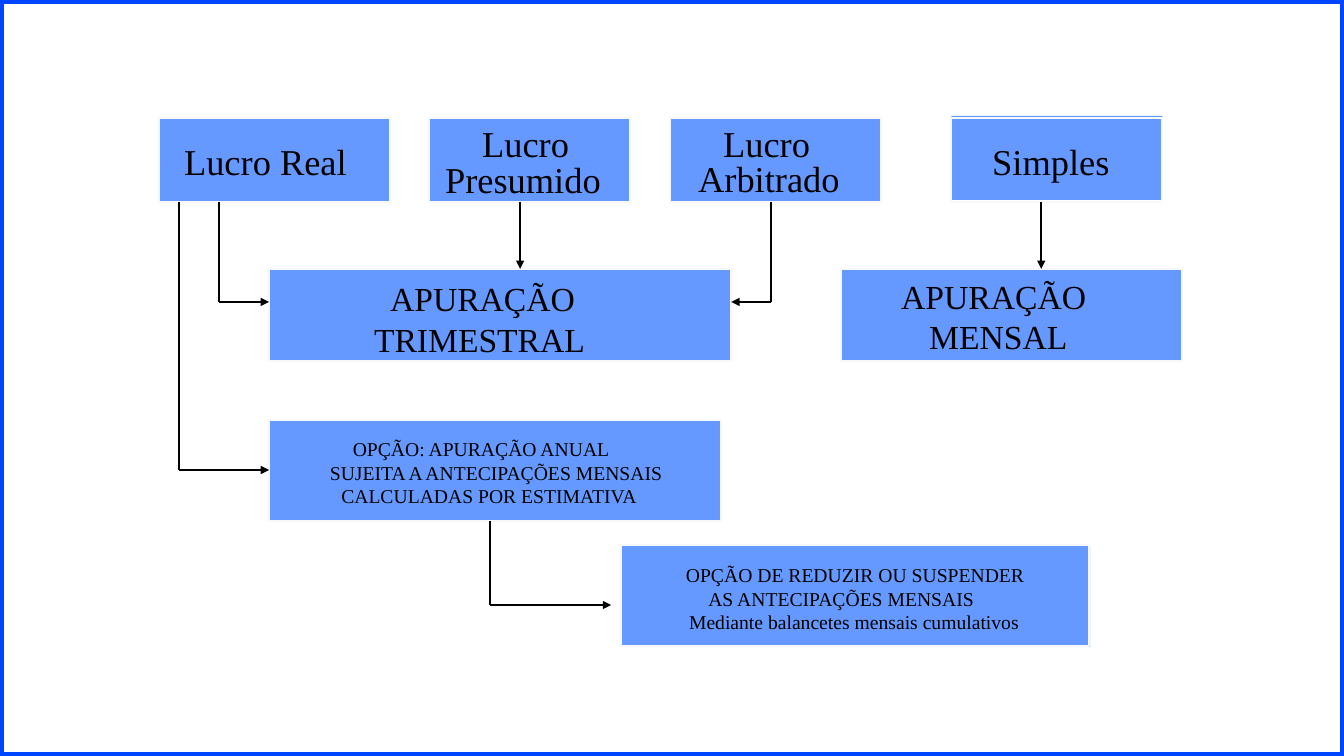
"""Build the flow chart of profit regimes and their assessment periods."""
from lxml import etree
from pptx import Presentation, util as u
from pptx.dml.color import RGBColor
from pptx.enum import shapes, text
from pptx.oxml.ns import qn

PX = u.Inches(1) / 100.8
BORDER_BLUE = RGBColor(0x00, 0x45, 0xFF)
BOX_BLUE = RGBColor(0x66, 0x99, 0xFF)
FRAME_GREY = RGBColor(0xF8, 0xF8, 0xF8)
BLACK = RGBColor(0, 0, 0)

# box (left, top, width, height), frame offset (x, y)
BOXES = [
    ((159, 118, 231, 84), (0, 0)),
    ((429, 118, 201, 84), (0, 0)),
    ((670, 118, 211, 84), (0, 0)),
    ((951, 116, 211, 84), (0, 2)),
    ((269, 269, 462, 92), (0, 0)),
    ((841, 269, 341, 92), (0, 0)),
    ((269, 420, 452, 101), (0, 0)),
    ((622, 546, 468, 101), (-1, -1)),
]
LEFT, CENTER = text.PP_ALIGN.LEFT, text.PP_ALIGN.CENTER
LABEL_GROUPS = [
    ({"size": 26, "align": LEFT, "width": 240, "height": 41}, [
        ("Lucro Real", 184, 136),
        ("Lucro", 482, 118),
        ("Presumido", 445, 154),
        ("Lucro", 723, 118),
        ("Arbitrado", 698, 153),
        ("Simples", 992, 136),
    ]),
    ({"size": 24, "align": LEFT, "width": 300, "height": 41}, [
        ("APURAÇÃO", 390, 275),
        ("TRIMESTRAL", 374, 316),
        ("APURAÇÃO", 901, 273),
        ("MENSAL", 929, 313),
    ]),
    ({"size": 14, "align": CENTER, "width": 500, "height": 24}, [
        ("OPÇÃO: APURAÇÃO ANUAL", 481, 435),
        ("SUJEITA A ANTECIPAÇÕES MENSAIS", 496, 459),
        ("CALCULADAS POR ESTIMATIVA", 489, 482),
        ("OPÇÃO DE REDUZIR OU SUSPENDER", 855, 561),
        ("AS ANTECIPAÇÕES MENSAIS", 841, 585),
        ("Mediante balancetes mensais cumulativos", 854, 608),
    ]),
]
ROUTES = [
    [(520, 202), (520, 269)],
    [(1041, 202), (1041, 269)],
    [(219, 202), (219, 302), (269, 302)],
    [(771, 202), (771, 302), (731, 302)],
    [(179, 202), (179, 470), (269, 470)],
    [(490, 521), (490, 605), (611, 605)],
]


def emu(*lengths):
    return [round(length * PX) for length in lengths]


def set_all(target, values):
    for name, value in values.items():
        setattr(target, name, value)


def add_box(slide, bounds, fill=None, line=None, weight=1.5):
    shape = slide.shapes.add_shape(shapes.MSO_SHAPE.RECTANGLE, *emu(*bounds))
    shape.shadow.inherit = False
    if fill is None:
        shape.fill.background()
    else:
        shape.fill.solid()
        shape.fill.fore_color.rgb = fill
    if line is None:
        shape.line.fill.background()
    else:
        shape.line.color.rgb = line
        shape.line.width = u.Pt(weight)


def add_label(slide, words, x, top, size, align, width, height):
    left = x - width / 2 if align == CENTER else x
    frame = slide.shapes.add_textbox(*emu(left, top, width, height)).text_frame
    set_all(frame, {"word_wrap": True, "margin_left": 0, "margin_right": 0,
                    "margin_top": 0, "margin_bottom": 0})
    paragraph = frame.paragraphs[0]
    set_all(paragraph, {"alignment": align, "line_spacing": 1.07,
                        "space_after": u.Pt(8)})
    run = paragraph.add_run()
    run.text = words
    set_all(run.font, {"name": "Times New Roman", "size": u.Pt(size)})
    run.font.color.rgb = BLACK


def add_route(slide, points):
    for start, end in zip(points, points[1:]):
        connector = slide.shapes.add_connector(
            shapes.MSO_CONNECTOR.STRAIGHT, *emu(*start, *end))
        connector.line.color.rgb = BLACK
        connector.line.width = u.Pt(1.25)
        if end == points[-1]:
            etree.SubElement(connector.line._get_or_add_ln(),
                             qn("a:tailEnd"), type="triangle")
        etree.SubElement(connector._element.spPr, qn("a:effectLst"))


def main():
    presentation = Presentation()
    set_all(presentation, {"slide_width": u.Inches(13.33),
                           "slide_height": u.Inches(7.5)})
    slide = presentation.slides.add_slide(presentation.slide_layouts[6])
    add_box(slide, (0, 0, 1344, 756), line=BORDER_BLUE, weight=6)
    for (left, top, width, height), (dx, dy) in BOXES:
        add_box(slide, (left, top, width, height), fill=BOX_BLUE)
        add_box(slide, (left + dx, top + dy, width, height), line=FRAME_GREY)
    for style, labels in LABEL_GROUPS:
        for words, x, top in labels:
            add_label(slide, words, x, top, **style)
    for points in ROUTES:
        add_route(slide, points)
    presentation.save("out.pptx")


if __name__ == "__main__":
    main()
